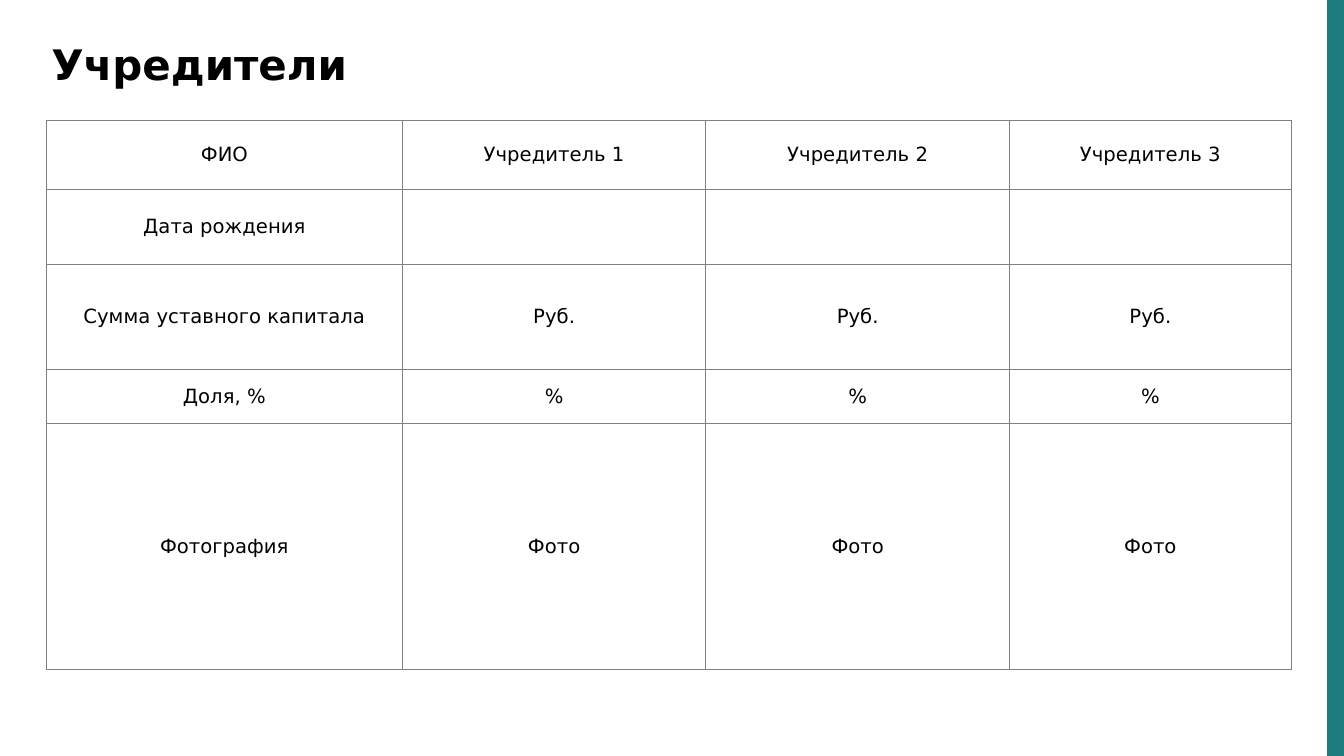
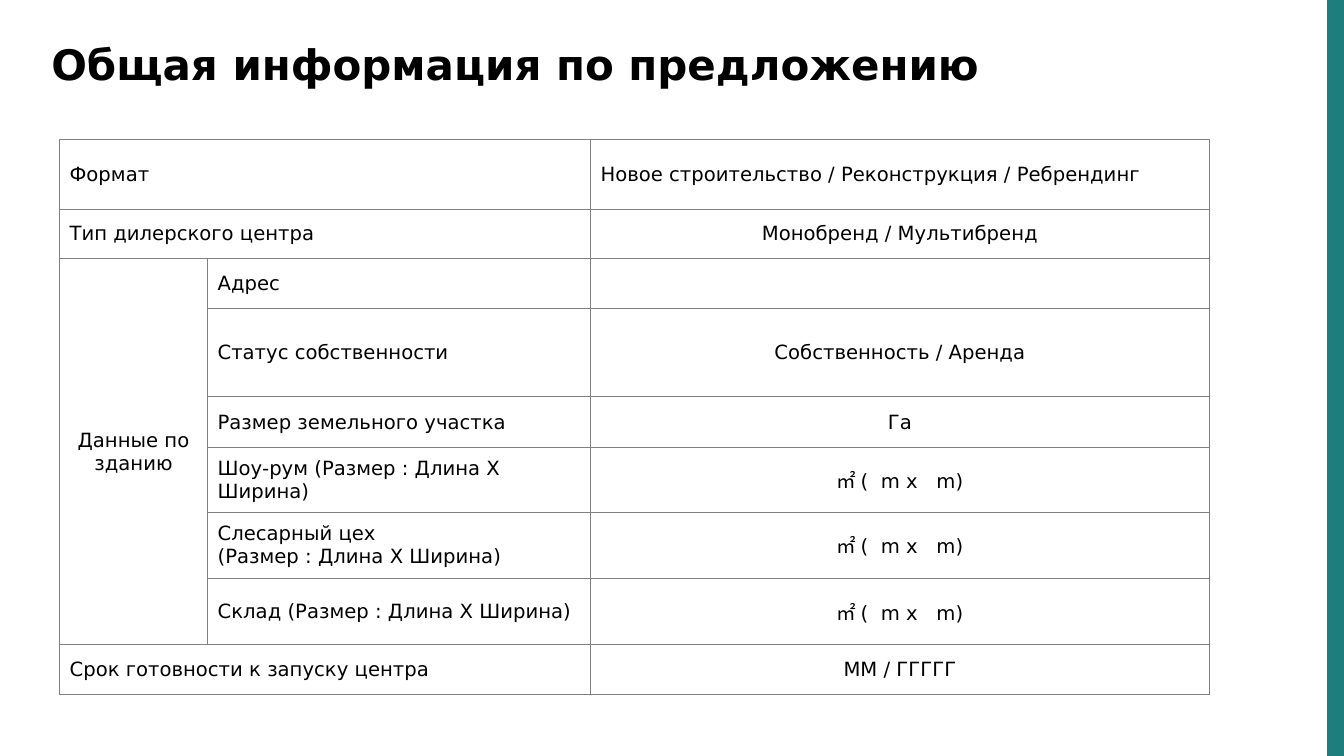
from itertools import product

from lxml import etree
from pptx import Presentation
from pptx.dml.color import RGBColor
from pptx.enum import shapes, text
from pptx.oxml import ns
from pptx.util import Cm, Pt

FONT = "DejaVu Sans"
BLACK = RGBColor(0x00, 0x00, 0x00)
TEAL = RGBColor(0x1E, 0x7D, 0x7D)
GREY = RGBColor(0x80, 0x80, 0x80)
LEFT, CENTER = text.PP_ALIGN.LEFT, text.PP_ALIGN.CENTER
AREA = "㎡ (  m x   m)"


def write(tf, words, size=14, bold=False, align=CENTER):
    """Fill a text frame, one paragraph per line, in the common font."""
    tf.text = words
    for p in tf.paragraphs:
        p.alignment = align
        for r in p.runs:
            r.font.name, r.font.size, r.font.bold = FONT, Pt(size), bold
            r.font.color.rgb = BLACK


def set_borders(cell, color, width):
    tcPr = cell._tc.get_or_add_tcPr()
    for side in ("a:lnL", "a:lnR", "a:lnT", "a:lnB"):
        ln = etree.SubElement(tcPr, ns.qn(side), w=str(Pt(width)))
        fill = etree.SubElement(ln, ns.qn("a:solidFill"))
        etree.SubElement(fill, ns.qn("a:srgbClr"), val=str(color))


# Each merge is (first row, first column, last row, last column).
pages = [
    dict(
        title="Учредители",
        at=(1.17, 3.04),
        cols=[8.97, 7.65, 7.65, 7.1],
        rows=[1.73, 1.89, 2.65, 1.36, 6.2],
        cells=[
            ["ФИО", "Учредитель 1", "Учредитель 2", "Учредитель 3"],
            ["Дата рождения", "", "", ""],
            ["Сумма уставного капитала"] + ["Руб."] * 3,
            ["Доля, %"] + ["%"] * 3,
            ["Фотография"] + ["Фото"] * 3,
        ],
        merges=[],
        left_cells=set(),
    ),
    dict(
        title="Общая информация по предложению",
        at=(1.5, 3.52),
        cols=[3.73, 9.65, 15.6],
        rows=[1.75, 1.25, 1.25, 2.23, 1.28, 1.63, 1.66, 1.68, 1.25],
        cells=[
            ["Формат", "", "Новое строительство / Реконструкция / Ребрендинг"],
            ["Тип дилерского центра", "", "Монобренд / Мультибренд"],
            ["Данные по зданию", "Адрес", ""],
            ["", "Статус собственности", "Собственность / Аренда"],
            ["", "Размер земельного участка", "Га"],
            ["", "Шоу-рум (Размер : Длина Х Ширина)", AREA],
            ["", "Слесарный цех\n(Размер : Длина Х Ширина)", AREA],
            ["", "Склад (Размер : Длина Х Ширина)", AREA],
            ["Срок готовности к запуску центра", "", "ММ / ГГГГГ"],
        ],
        merges=[(0, 0, 0, 1), (1, 0, 1, 1), (2, 0, 7, 0), (8, 0, 8, 1)],
        left_cells=set(product(range(9), range(2))) - {(2, 0)} | {(0, 2)},
    ),
]

prs = Presentation()
prs.slide_width, prs.slide_height = Cm(33.87), Cm(19.05)
title_only = prs.slide_layouts[5]

for page in pages:
    s = prs.slides.add_slide(title_only)

    title = s.shapes.title
    title.left, title.top = Cm(1.04), Cm(0.84)
    title.width, title.height = Cm(32.03), Cm(1.55)
    tf = title.text_frame
    tf.word_wrap = True
    tf.auto_size = text.MSO_AUTO_SIZE.SHAPE_TO_FIT_TEXT
    tf.vertical_anchor = text.MSO_ANCHOR.MIDDLE
    write(tf, page["title"], size=30, bold=True, align=LEFT)

    band = s.shapes.add_shape(shapes.MSO_SHAPE.RECTANGLE,
                              Cm(33.45), 0, Cm(0.42), prs.slide_height)
    band.shadow.inherit = False
    band.fill.solid()
    band.fill.fore_color.rgb = TEAL
    band.line.color.rgb = TEAL
    band.line.width = Pt(1)

    cols, rows = page["cols"], page["rows"]
    x, y = page["at"]
    table = s.shapes.add_table(len(rows), len(cols), Cm(x), Cm(y),
                               Cm(sum(cols)), Cm(sum(rows))).table
    table.first_row = table.horz_banding = False
    for col, width in zip(table.columns, cols):
        col.width = Cm(width)
    for row, height in zip(table.rows, rows):
        row.height = Cm(height)
    for top, left, bottom, right in page["merges"]:
        table.cell(top, left).merge(table.cell(bottom, right))

    for r, c in product(range(len(rows)), range(len(cols))):
        cell = table.cell(r, c)
        set_borders(cell, GREY, 0.75)
        cell.fill.background()
        cell.vertical_anchor = text.MSO_ANCHOR.MIDDLE
        words = page["cells"][r][c]
        if words:
            align = LEFT if (r, c) in page["left_cells"] else CENTER
            write(cell.text_frame, words, align=align)

prs.save("out.pptx")
